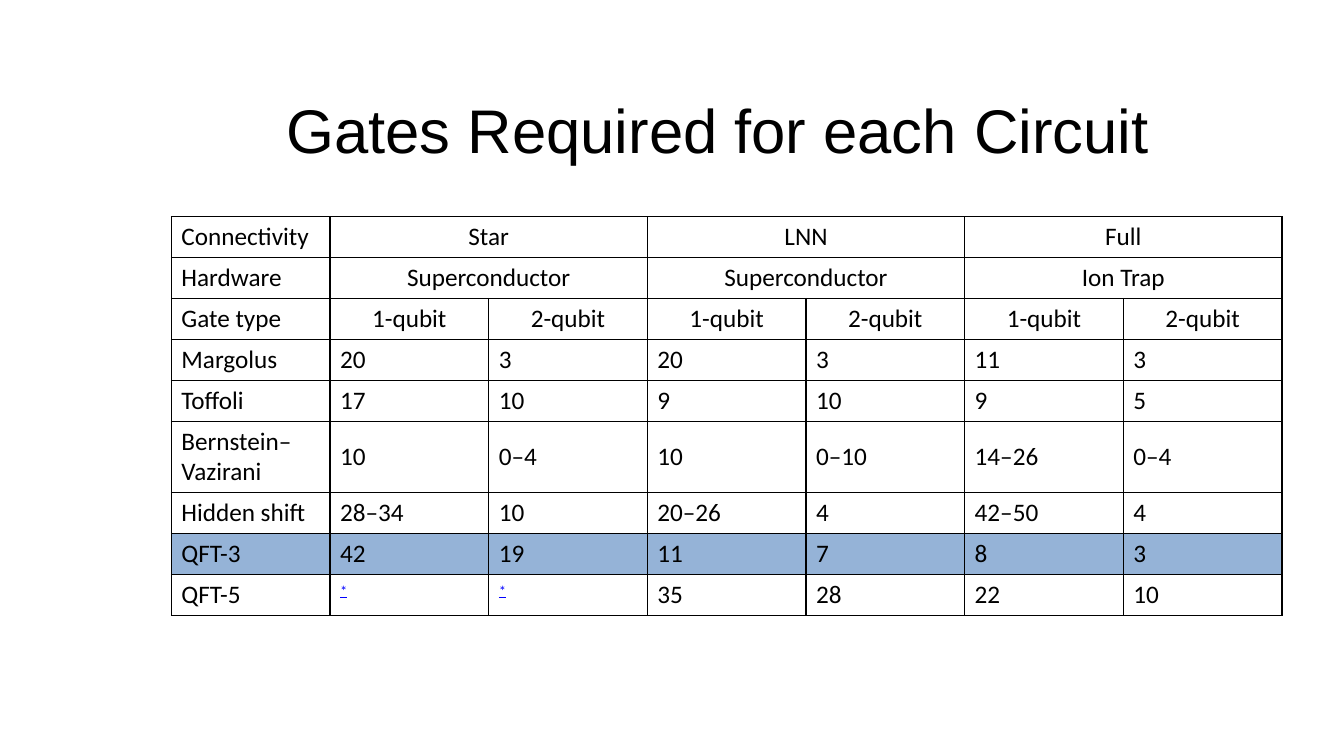
from pptx import Presentation
from pptx.dml.color import RGBColor
from pptx.enum.text import MSO_ANCHOR as ANCHOR, PP_ALIGN as ALIGN
from pptx.oxml import parse_xml
from pptx.oxml.ns import nsdecls
from pptx.util import Pt

COLORS = {"text": "000000", "border": "000000", "note": "0000FF", "highlight": "95B3D7"}
HEADER_ROWS = 3
MERGED_ROWS = 2
HIGHLIGHT = "QFT-3"
GATES = [
    ["Connectivity", "Star", "", "LNN", "", "Full", ""],
    ["Hardware", "Superconductor", "", "Superconductor", "", "Ion Trap", ""],
    ["Gate type"] + ["1-qubit", "2-qubit"] * 3,
    ["Margolus", "20", "3", "20", "3", "11", "3"],
    ["Toffoli", "17", "10", "9", "10", "9", "5"],
    ["Bernstein–Vazirani", "10", "0–4", "10", "0–10", "14–26", "0–4"],
    ["Hidden shift", "28–34", "10", "20–26", "4", "42–50", "4"],
    ["QFT-3", "42", "19", "11", "7", "8", "3"],
    ["QFT-5", "*", "*", "35", "28", "22", "10"],
]
ROW_HEIGHT, TALL_ROW_HEIGHT = 29.2, 51.2


def rgb(name):
    return RGBColor.from_string(COLORS[name])


def write(tf, text, font="Calibri", size=18, color="text", align=ALIGN.LEFT, note=False):
    """Fill a text frame; a note is an underlined superscript."""
    p = tf.paragraphs[0]
    p.alignment = align
    r = p.add_run()
    r.text = text
    r.font.name = font
    r.font.size = Pt(size)
    r.font.color.rgb = rgb(color)
    if note:
        r.font.underline = True
        r.font._element.set("baseline", "30000")


def set_borders(cell, width=1):
    tc_pr = cell._tc.get_or_add_tcPr()
    for side in ("lnL", "lnR", "lnT", "lnB"):
        tc_pr.append(parse_xml(
            f'<a:{side} {nsdecls("a")} w="{Pt(width)}"><a:solidFill>'
            f'<a:srgbClr val="{COLORS["border"]}"/></a:solidFill></a:{side}>'))


def add_title(slide, text, left, top, width, height):
    title = slide.shapes.title
    title.left, title.top, title.width, title.height = map(Pt, (left, top, width, height))
    tf = title.text_frame
    tf.word_wrap = True
    tf.vertical_anchor = ANCHOR.MIDDLE
    write(tf, text, font="Arial", size=44, align=ALIGN.CENTER)


def add_gate_table(slide, left, top, width):
    n_rows, n_cols = len(GATES), len(GATES[0])
    heights = [TALL_ROW_HEIGHT if row[0] == "Bernstein–Vazirani" else ROW_HEIGHT
               for row in GATES]
    table = slide.shapes.add_table(
        n_rows, n_cols, Pt(left), Pt(top), Pt(width), Pt(sum(heights))).table
    table.first_row = table.horz_banding = False
    for column in table.columns:
        column.width = Pt(width / n_cols)

    for i, (row, height) in enumerate(zip(GATES, heights)):
        table.rows[i].height = Pt(height)
        for j, text in enumerate(row):
            cell = table.cell(i, j)
            cell.vertical_anchor = ANCHOR.MIDDLE
            set_borders(cell)
            if row[0] == HIGHLIGHT:
                cell.fill.solid()
                cell.fill.fore_color.rgb = rgb("highlight")
            else:
                cell.fill.background()
            if text:
                is_note = text == "*"
                write(cell.text_frame, text, note=is_note,
                      color="note" if is_note else "text",
                      align=ALIGN.CENTER if i < HEADER_ROWS and j else ALIGN.LEFT)

    for i in range(MERGED_ROWS):
        for j in range(1, n_cols, 2):
            table.cell(i, j).merge(table.cell(i, j + 1))


def main():
    prs = Presentation()
    prs.slide_width, prs.slide_height = Pt(960), Pt(540)
    slide = prs.slides.add_slide(prs.slide_layouts[5])
    left, width = 122.4, 793.4
    add_title(slide, "Gates Required for each Circuit ", left, 46.8, width, 90)
    add_gate_table(slide, left, 154.8, width)
    prs.save("out.pptx")


if __name__ == "__main__":
    main()
